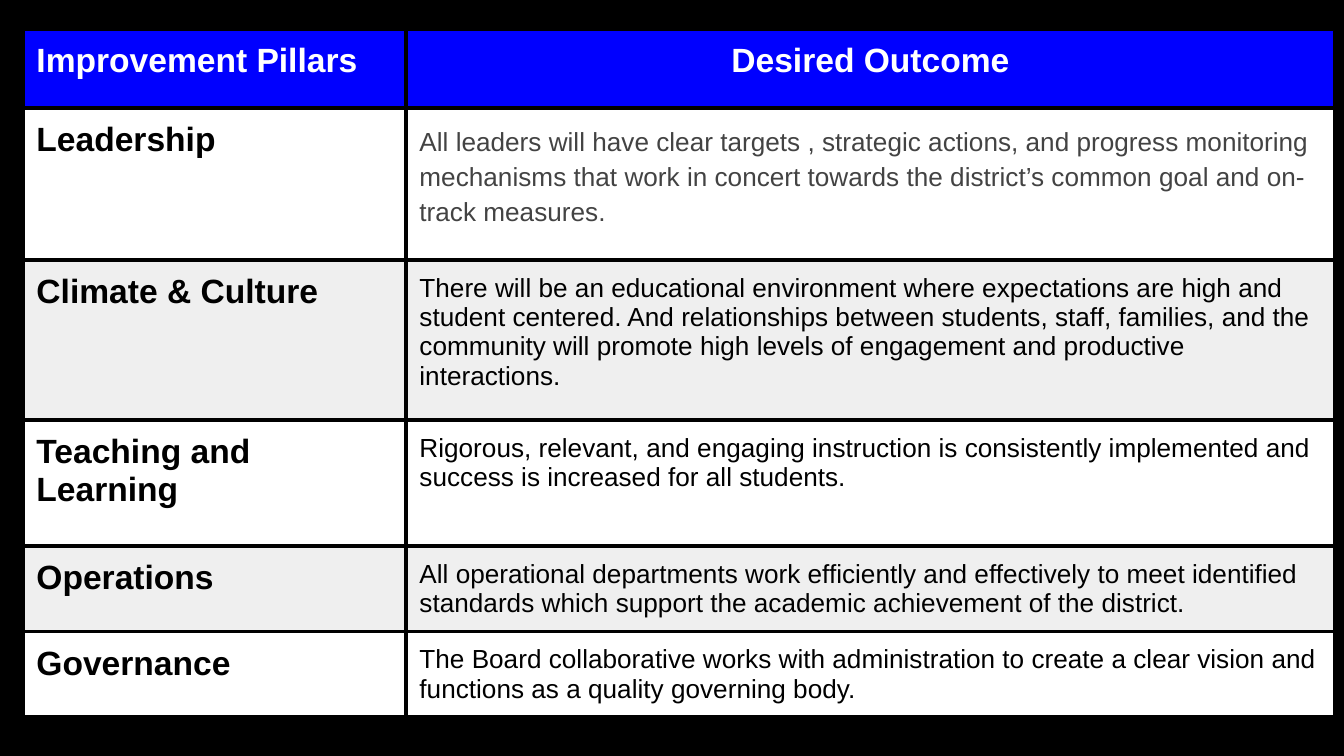
import pptx
import pptx.dml.color
import pptx.enum.text
import pptx.oxml
import pptx.oxml.ns
import pptx.util

SCALE = 914400 / 134.4  # EMU in one px
FONT = "Arial"
BLACK, WHITE, BLUE, PALE, GREY = "000000", "FFFFFF", "0000FF", "EFEFEF", "434343"
HEADS = ("Improvement Pillars", "Desired Outcome")
PILLARS = [
    ("Leadership",
     "All leaders will have clear targets , strategic actions, and progress "
     "monitoring mechanisms that work in concert towards the district’s common "
     "goal and on-track measures."),
    ("Climate & Culture",
     "There will be an educational environment where expectations are high and "
     "student centered. And relationships between students, staff, families, and "
     "the community will promote high levels of engagement and productive "
     "interactions."),
    ("Teaching and Learning",
     "Rigorous, relevant, and engaging instruction is consistently implemented "
     "and success is increased for all students."),
    ("Operations",
     "All operational departments work efficiently and effectively to meet "
     "identified standards which support the academic achievement of the "
     "district."),
    ("Governance",
     "The Board collaborative works with administration to create a clear vision "
     "and functions as a quality governing body."),
]


def px(n):
    return pptx.util.Emu(round(n * SCALE))


def color(code):
    return pptx.dml.color.RGBColor.from_string(code)


def edge(cell, code, width):
    """Draw all four borders of a cell."""
    props = cell._tc.get_or_add_tcPr()
    for i, side in enumerate("LRTB"):
        line = pptx.oxml.parse_xml(
            f'<a:ln{side} {pptx.oxml.ns.nsdecls("a")} w="{pptx.util.Pt(width)}">'
            f'<a:solidFill><a:srgbClr val="{code}"/></a:solidFill></a:ln{side}>')
        props.insert(i, line)


def write(cell, text, fill, ink, size, bold):
    cell.fill.solid()
    cell.fill.fore_color.rgb = color(fill)
    edge(cell, BLACK, 2.25)
    cell.margin_left = cell.margin_right = pptx.util.Inches(0.1)
    cell.margin_top = cell.margin_bottom = pptx.util.Inches(0.1)
    para = cell.text_frame.paragraphs[0]
    run = para.add_run()
    run.text = text
    run.font.name = FONT
    run.font.size = pptx.util.Pt(size)
    run.font.bold = bold
    run.font.color.rgb = color(ink)
    return para


def grid(slide, left, top, cols, rows):
    """Place the table of pillars and their outcomes."""
    frame = slide.shapes.add_table(len(rows), len(cols), px(left), px(top),
                                   px(sum(cols)), px(sum(rows)))
    table = frame.table
    for col, width in zip(table.columns, cols):
        col.width = px(width)
    for row, height in zip(table.rows, rows):
        row.height = px(height)

    for i, head in enumerate(HEADS):
        para = write(table.cell(0, i), head, BLUE, WHITE, 18, True)
    para.alignment = pptx.enum.text.PP_ALIGN.CENTER

    for i, (name, goal) in enumerate(PILLARS, 1):
        fill = WHITE if i % 2 else PALE
        write(table.cell(i, 0), name, fill, BLACK, 18, True)
        ink = GREY if i == 1 else BLACK
        para = write(table.cell(i, 1), goal, fill, ink, 14, False)
        if i == 1:
            para.line_spacing = 1.2


def main():
    deck = pptx.Presentation()
    deck.slide_width, deck.slide_height = px(1344), px(756)
    slide = deck.slides.add_slide(deck.slide_layouts[6])
    slide.background.fill.solid()
    slide.background.fill.fore_color.rgb = color(BLACK)
    grid(slide, 23, 29, (383, 929), (79, 152, 160, 126, 79, 79))
    deck.save("out.pptx")


if __name__ == "__main__":
    main()
